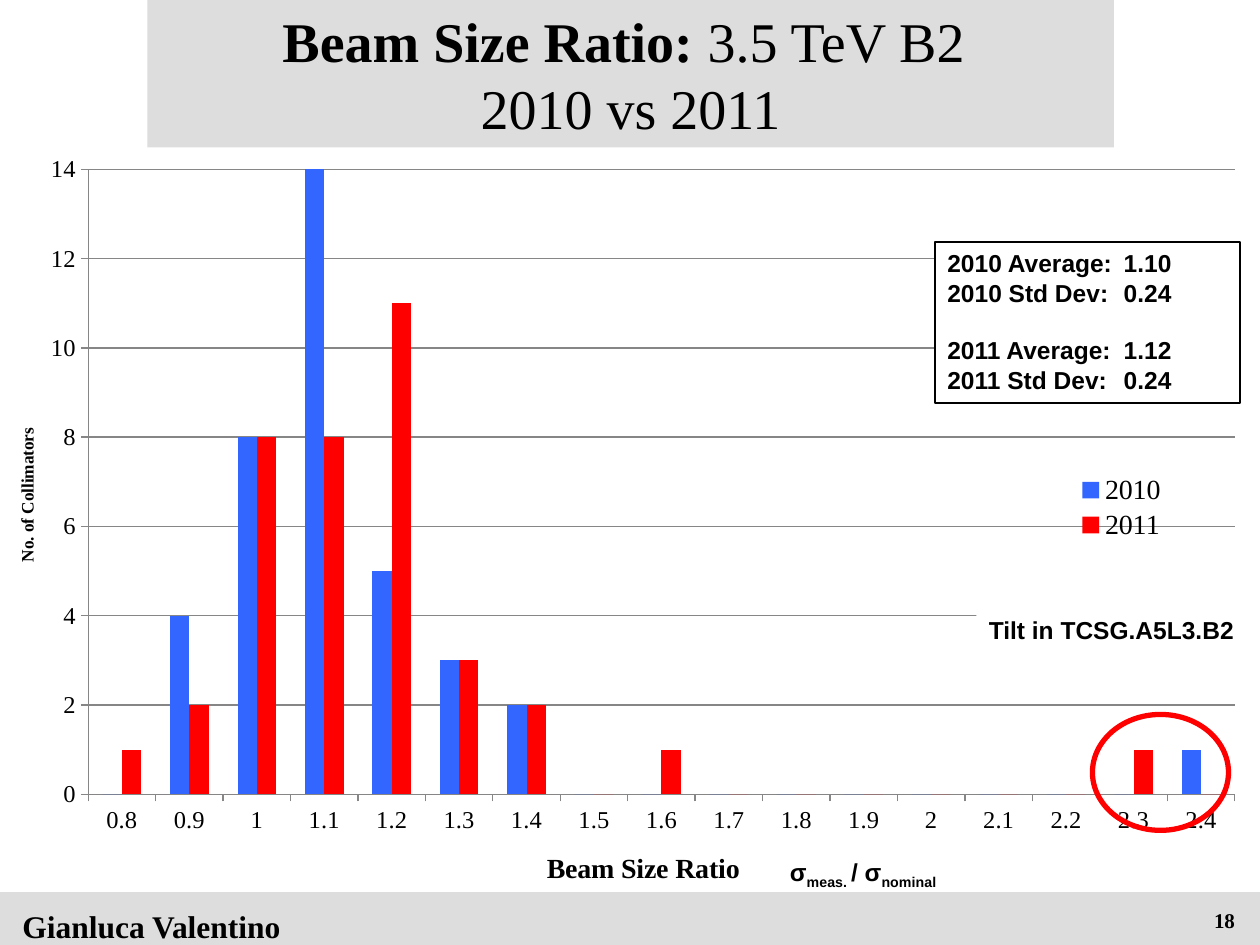
"""Build the beam size ratio slide comparing 2010 with 2011."""
from dataclasses import dataclass

from lxml.etree import SubElement
from pptx import Presentation
from pptx.chart.data import CategoryChartData
from pptx.dml.color import RGBColor
from pptx.enum.chart import XL_CHART_TYPE, XL_LEGEND_POSITION, XL_TICK_MARK
from pptx.enum.shapes import MSO_SHAPE
from pptx.enum.text import MSO_ANCHOR, MSO_AUTO_SIZE, PP_ALIGN
from pptx.oxml.ns import qn
from pptx.util import Inches, Pt


@dataclass(frozen=True)
class Theme:
    black: str = "000000"
    white: str = "FFFFFF"
    band: str = "DDDDDD"
    grid: str = "868686"
    blue: str = "3366FF"
    red: str = "FF0000"
    serif: str = "Times New Roman"
    sans: str = "Arial"
    title: int = 32
    author: int = 18
    heading: int = 16
    body: int = 14
    number: int = 12
    small: int = 10


@dataclass(frozen=True)
class Area:
    left: float
    top: float
    width: float
    height: float

    def lengths(self) -> tuple:
        return tuple(map(Inches, (self.left, self.top, self.width, self.height)))


@dataclass(frozen=True)
class Span:
    text: str
    bold: bool = True
    baseline: int = 0


@dataclass(frozen=True)
class Series:
    name: str
    counts: tuple
    color: str


@dataclass(frozen=True)
class Note:
    area: Area
    lines: tuple
    fill: str = ""
    line: str = ""
    gap_line: int = -1
    tab: float = 0


THEME = Theme()
RATIOS = tuple(f"{step / 10:g}" for step in range(8, 25))
SERIES = (
    Series("2010", (0, 4, 8, 14, 5, 3, 2) + (0,) * 9 + (1,), THEME.blue),
    Series("2011", (1, 2, 8, 8, 11, 3, 2, 0, 1) + (0,) * 6 + (1, 0), THEME.red),
)
NOTES = (
    Note(Area(6.17, 6.75, 1.58, 0.34), (
        (Span("σ"), Span("meas. ", baseline=-25000),
         Span("/ σ"), Span("nominal", baseline=-25000)),
    )),
    Note(Area(7.42, 1.92, 2.42, 1.28), (
        (Span("2010 Average:\t1.10"),), (Span("2010 Std Dev:\t0.24"),),
        (Span("2011 Average:\t1.12"),), (Span("2011 Std Dev:\t0.24"),),
    ), THEME.white, THEME.black, gap_line=2, tab=1.4),
    Note(Area(7.75, 4.83, 2.17, 0.34), ((Span("Tilt in TCSG.A5L3.B2"),),), THEME.white),
)


def style_font(font, size: int, face: str, bold: bool = False) -> None:
    font.size, font.name, font.bold = Pt(size), face, bold
    font.color.rgb = RGBColor.from_string(THEME.black)


def write(frame, lines: tuple, *, size: int, face: str, align=PP_ALIGN.LEFT,
          anchor=MSO_ANCHOR.TOP, gap_line: int = -1, tab: float = 0) -> None:
    """Fill a text frame with one paragraph for each line of spans."""
    frame.word_wrap, frame.auto_size = True, MSO_AUTO_SIZE.NONE
    frame.vertical_anchor = anchor
    for index, spans in enumerate(lines):
        para = frame.paragraphs[0] if index == 0 else frame.add_paragraph()
        para.alignment = align
        if index == gap_line:
            para.space_before = Pt(size * 1.15)
        if tab:
            stops = SubElement(para._p.get_or_add_pPr(), qn("a:tabLst"))
            SubElement(stops, qn("a:tab"), pos=str(Inches(tab)), algn="l")
        for span in spans:
            if span.text == "\n":
                para.add_line_break()
                continue
            run = para.add_run()
            run.text = span.text
            style_font(run.font, size, face, span.bold)
            if span.baseline:
                run._r.get_or_add_rPr().set("baseline", str(span.baseline))


def add_panel(slide, area: Area, *, kind=MSO_SHAPE.RECTANGLE, fill: str = "",
              line: str = "", weight: float = 1.25):
    panel = slide.shapes.add_shape(kind, *area.lengths())
    panel.shadow.inherit = False
    if fill:
        panel.fill.solid()
        panel.fill.fore_color.rgb = RGBColor.from_string(fill)
    else:
        panel.fill.background()
    if line:
        panel.line.color.rgb = RGBColor.from_string(line)
        panel.line.width = Pt(weight)
    else:
        panel.line.fill.background()
    return panel


def add_note(slide, note: Note) -> None:
    if note.fill:
        box = add_panel(slide, note.area, fill=note.fill, line=note.line)
    else:
        box = slide.shapes.add_textbox(*note.area.lengths())
    write(box.text_frame, note.lines, size=THEME.body, face=THEME.sans,
          gap_line=note.gap_line, tab=note.tab)


def place(element, *, inner: bool = False, **fractions: float) -> None:
    """Give a chart part a manual layout in fractions of the chart."""
    for old in element.findall(qn("c:layout")):
        element.remove(old)
    overlay = element.find(qn("c:overlay"))
    layout = SubElement(element, qn("c:layout"))
    element.insert(0 if overlay is None else element.index(overlay), layout)
    manual = SubElement(layout, qn("c:manualLayout"))
    if inner:
        SubElement(manual, qn("c:layoutTarget"), val="inner")
    for mode in ("xMode", "yMode"):
        SubElement(manual, qn(f"c:{mode}"), val="edge")
    for name, fraction in fractions.items():
        SubElement(manual, qn(f"c:{name}"), val=str(fraction))


def style_axis(axis, title: str, title_size: int, left: float, top: float) -> None:
    axis.major_tick_mark, axis.minor_tick_mark = XL_TICK_MARK.OUTSIDE, XL_TICK_MARK.NONE
    axis.format.line.color.rgb = RGBColor.from_string(THEME.grid)
    style_font(axis.tick_labels.font, THEME.body, THEME.serif)
    para = axis.axis_title.text_frame.paragraphs[0]
    span = para.add_run()
    span.text = title
    style_font(span.font, title_size, THEME.serif, True)
    place(axis.axis_title._element, x=left, y=top)


def add_histogram(slide, area: Area) -> None:
    data = CategoryChartData()
    data.categories = RATIOS
    for series in SERIES:
        data.add_series(series.name, series.counts)
    chart = slide.shapes.add_chart(
        XL_CHART_TYPE.COLUMN_CLUSTERED, *area.lengths(), data).chart
    style_font(chart.font, THEME.small, THEME.serif)
    chart.has_title = False
    plot = chart.plots[0]
    plot.gap_width, plot.overlap, plot.vary_by_categories = 150, 0, False
    for drawn, series in zip(plot.series, SERIES):
        drawn.format.fill.solid()
        drawn.format.fill.fore_color.rgb = RGBColor.from_string(series.color)
    style_axis(chart.category_axis, "Beam Size Ratio", THEME.heading, 0.43, 0.95)
    counts = chart.value_axis
    style_axis(counts, "No. of Collimators", THEME.small, 0.01, 0.38)
    counts.axis_title.text_frame._txBody.bodyPr.set("rot", "-5400000")
    counts.minimum_scale, counts.maximum_scale, counts.major_unit = 0, 14, 2
    counts.major_gridlines.format.line.color.rgb = RGBColor.from_string(THEME.grid)
    chart.has_legend = True
    chart.legend.position = XL_LEGEND_POSITION.RIGHT
    chart.legend.include_in_layout = False
    style_font(chart.legend.font, THEME.heading, THEME.serif)
    place(chart.legend._element, x=0.85, y=0.44, w=0.08, h=0.1)
    place(chart._chartSpace.chart.plotArea, inner=True, x=0.07, y=0.03, w=0.91, h=0.85)


def main() -> None:
    deck = Presentation()
    deck.slide_width, deck.slide_height = Inches(10), Inches(7.5)
    slide = deck.slides.add_slide(deck.slide_layouts[5])
    add_panel(slide, Area(0, 7.08, 10, 0.42), fill=THEME.band)
    title = slide.shapes.title
    title.left, title.top, title.width, title.height = Area(1.17, 0, 7.67, 1.17).lengths()
    title.fill.solid()
    title.fill.fore_color.rgb = RGBColor.from_string(THEME.band)
    heading = (Span("Beam Size Ratio: "), Span("3.5 TeV B2 ", False),
               Span("\n"), Span("2010 vs 2011", False))
    write(title.text_frame, (heading,), size=THEME.title, face=THEME.serif,
          align=PP_ALIGN.CENTER, anchor=MSO_ANCHOR.MIDDLE)
    for left, text, size, align in (
            (0.08, "Gianluca Valentino", THEME.author, PP_ALIGN.LEFT),
            (7.58, "18", THEME.number, PP_ALIGN.RIGHT)):
        box = slide.shapes.add_textbox(*Area(left, 7.15, 2.32, 0.33).lengths())
        write(box.text_frame, ((Span(text),),), size=size, face=THEME.serif, align=align)
    add_histogram(slide, Area(0, 1.17, 10, 5.92))
    for note in NOTES:
        add_note(slide, note)
    add_panel(slide, Area(8.67, 5.67, 1.08, 0.92), kind=MSO_SHAPE.OVAL,
              line=THEME.red, weight=3)
    deck.save("out.pptx")


if __name__ == "__main__":
    main()
